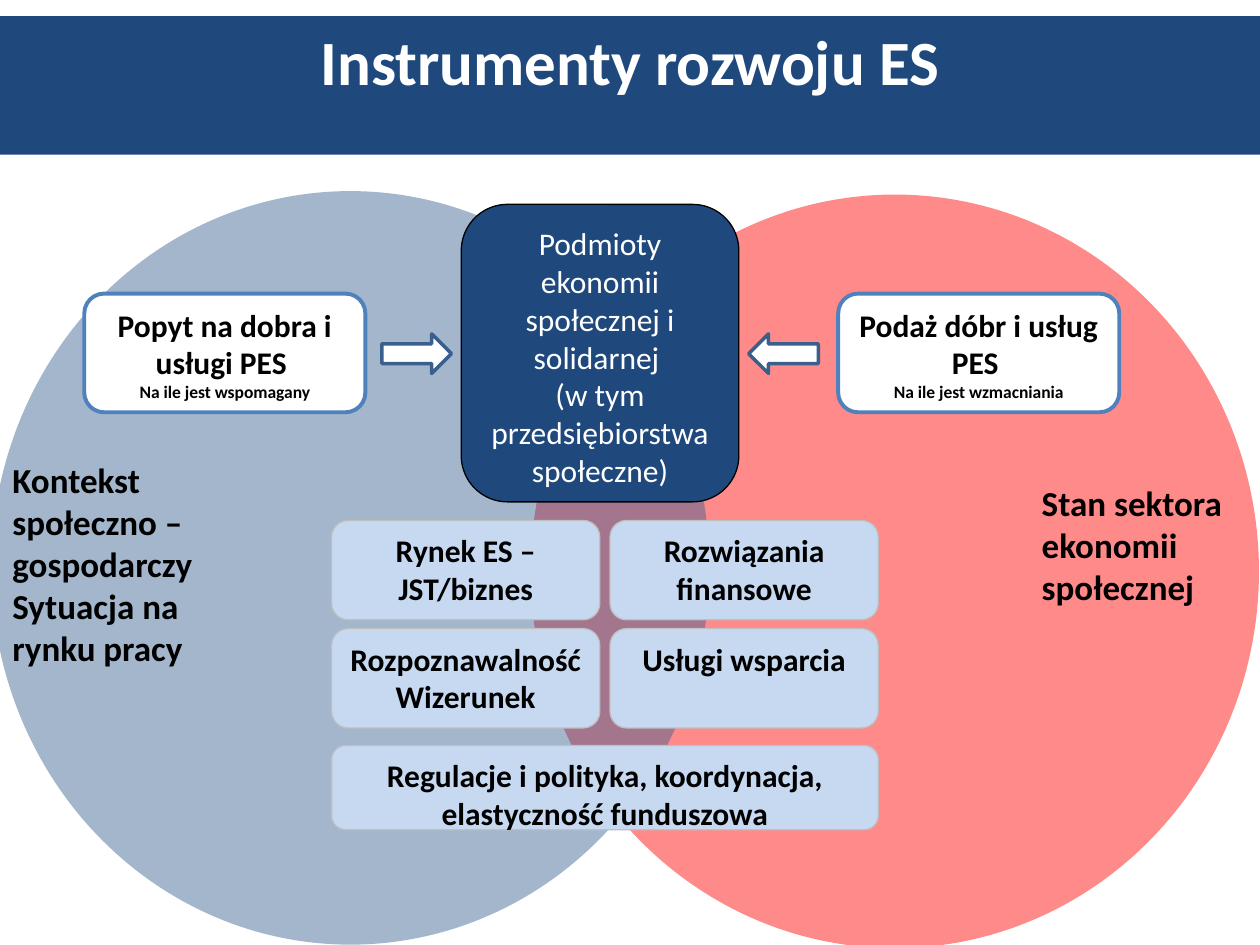
from dataclasses import dataclass

from lxml import etree
from pptx import Presentation
from pptx.dml.color import RGBColor
from pptx.enum.shapes import MSO_SHAPE
from pptx.enum.text import MSO_ANCHOR, MSO_AUTO_SIZE, PP_ALIGN
from pptx.oxml.ns import qn
from pptx.util import Pt

OVAL, ROUNDED, ARROW = MSO_SHAPE.OVAL, MSO_SHAPE.ROUNDED_RECTANGLE, MSO_SHAPE.RIGHT_ARROW
TOP = MSO_ANCHOR.TOP
FIT_SHAPE, NO_FIT = MSO_AUTO_SIZE.SHAPE_TO_FIT_TEXT, MSO_AUTO_SIZE.NONE
LEFT, CENTER = PP_ALIGN.LEFT, PP_ALIGN.CENTER


@dataclass(frozen=True)
class Theme:
    font: str = "Calibri"
    navy: str = "1F497D"
    white: str = "FFFFFF"
    black: str = "000000"
    context: str = "376092"
    sector: str = "FF0000"
    frame: str = "4F81BD"
    arrow: str = "3A5F8C"
    tile: str = "C6D9F1"
    tile_edge: str = "BFBFBF"
    opacity: int = 46
    title_size: int = 36
    label_size: int = 20
    body_size: int = 18
    note_size: int = 10


@dataclass(frozen=True)
class Box:
    left: float
    top: float
    width: float
    height: float

    def inside(self, left, top, width, height):
        return Box(self.left + left, self.top + top, width, height)

    def lengths(self):
        return [Pt(value) for value in (self.left, self.top, self.width, self.height)]


THEME = Theme()


def write(shape, lines, color, align=CENTER, fit=NO_FIT):
    frame = shape.text_frame
    for name, value in {"word_wrap": True, "vertical_anchor": TOP, "auto_size": fit}.items():
        setattr(frame, name, value)
    for index, (text, size, bold) in enumerate(lines):
        para = frame.paragraphs[0] if index == 0 else frame.add_paragraph()
        para.text = text
        para.alignment = align
        for span in para.runs:
            style = {"name": THEME.font, "size": Pt(size), "bold": bold}
            for name, value in style.items():
                setattr(span.font, name, value)
            span.font.color.rgb = RGBColor.from_string(color)


def paint(shape, color):
    shape.fill.solid()
    shape.fill.fore_color.rgb = RGBColor.from_string(color)


def add_figure(page, kind, box, fill, edge=None, weight=0.75):
    shape = page.shapes.add_shape(kind, *box.lengths())
    shape.shadow.inherit = False
    paint(shape, fill)
    if edge:
        shape.line.color.rgb = RGBColor.from_string(edge)
        shape.line.width = Pt(weight)
    else:
        shape.line.fill.background()
    return shape


def add_title(page, box, text):
    title = page.shapes.title
    for name, value in zip(("left", "top", "width", "height"), box.lengths()):
        setattr(title, name, value)
    paint(title, THEME.navy)
    write(title, [(text, THEME.title_size, True)], THEME.white)


def add_circles(page, box):
    circles = (
        (box.inside(308.2, 2, 416.2, 430.6), THEME.sector),
        (box.inside(0, 0, 410.4, 430.6), THEME.context),
    )
    for area, color in circles:
        circle = add_figure(page, OVAL, area, color)
        tint = circle.fill._xPr.find(".//" + qn("a:srgbClr"))
        etree.SubElement(tint, qn("a:alpha"), val=str(THEME.opacity * 1000))


def add_market(page, box):
    entities = add_figure(page, ROUNDED, box.inside(215.4, 0, 158.6, 170), THEME.navy, THEME.black)
    lines = ("Podmioty ekonomii społecznej i solidarnej ", "(w tym przedsiębiorstwa społeczne)")
    write(entities, [(line, THEME.body_size, False) for line in lines], THEME.white)

    sides = (
        (0, 170, 0, "Popyt na dobra i usługi PES ", "Na ile jest wspomagany"),
        (430.8, 379.6, 180, "Podaż dóbr i usług PES ", "Na ile jest wzmacniania"),
    )
    for card_left, arrow_left, turn, heading, note in sides:
        card = add_figure(page, ROUNDED, box.inside(card_left, 51, 160.6, 67.8),
                          THEME.white, THEME.frame, 2.25)
        write(card, [(heading, THEME.body_size, True), (note, THEME.note_size, True)], THEME.black)
        arrow = add_figure(page, ARROW, box.inside(arrow_left, 74, 39.8, 22.6),
                           THEME.white, THEME.arrow, 2)
        arrow.rotation = turn


def add_instruments(page, box):
    gap, tile_height, base_height = 5.8, 56.8, 48.2
    tile_width = (box.width - gap) / 2
    tiles = (
        ("Rynek ES – JST/biznes", "Rozwiązania finansowe"),
        ("Rozpoznawalność\vWizerunek", "Usługi wsparcia"),
    )
    areas = [
        (text, box.inside(column * (tile_width + gap), row * (tile_height + 5), tile_width, tile_height))
        for row, texts in enumerate(tiles)
        for column, text in enumerate(texts)
    ]
    areas.append(("Regulacje i polityka, koordynacja, elastyczność funduszowa",
                  box.inside(0, box.height - base_height, box.width, base_height)))
    for text, area in areas:
        tile = add_figure(page, ROUNDED, area, THEME.tile, THEME.tile_edge)
        write(tile, [(text, THEME.body_size, True)], THEME.black)


def add_label(page, box, paragraphs):
    label = page.shapes.add_textbox(*box.lengths())
    write(label, [(text, THEME.label_size, True) for text in paragraphs],
          THEME.black, LEFT, FIT_SHAPE)


def main():
    deck = Presentation()
    deck.slide_width, deck.slide_height = Pt(720), Pt(540)
    page = deck.slides.add_slide(deck.slide_layouts[5])
    add_title(page, Box(0, 9.2, 720, 79.2), "Instrumenty rozwoju ES")
    add_circles(page, Box(-5, 109.2, 724.4, 432.6))
    add_market(page, Box(48.2, 116.8, 591.4, 170))
    add_instruments(page, Box(189.5, 297.4, 312.4, 176.8))
    add_label(page, Box(588.2, 271.4, 121.7, 80), ["Stan sektora ekonomii społecznej"])
    add_label(page, Box(0, 258.5, 121.7, 128),
              ["Kontekst społeczno – gospodarczy", "Sytuacja na rynku pracy"])
    deck.save("out.pptx")


if __name__ == "__main__":
    main()
